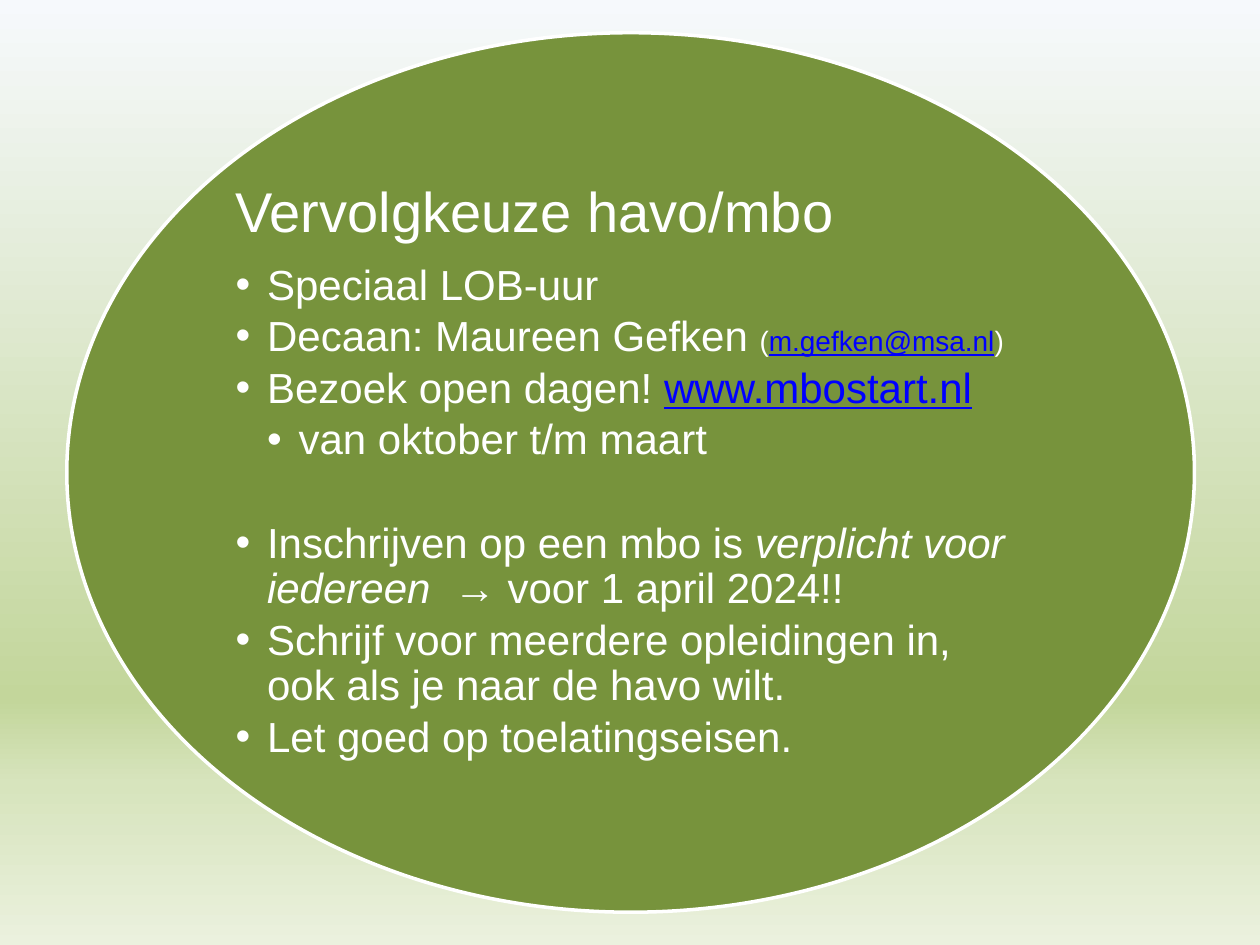
from lxml.etree import SubElement
from pptx import Presentation
from pptx.dml.color import RGBColor
from pptx.enum.shapes import MSO_SHAPE
from pptx.enum.text import MSO_ANCHOR
from pptx.oxml.ns import qn
from pptx.util import Inches, Pt

WHITE = RGBColor(0xFF, 0xFF, 0xFF)
GREEN = RGBColor(0x77, 0x93, 0x3C)
BLUE = RGBColor(0x00, 0x00, 0xFF)
GRADIENT = [
    (0, RGBColor(0xF6, 0xF9, 0xFC)),
    (74, RGBColor(0xC3, 0xD6, 0x9B)),
    (83, RGBColor(0xD7, 0xE4, 0xBD)),
    (100, RGBColor(0xEB, 0xF1, 0xDE)),
]

PLAIN = {}
SMALL = {"size": 16}
ITALIC = {"italic": True}
LINK = {"color": BLUE, "underline": True}

TITLE_GAP, LINE_GAP, SECTION_GAP = 11.2, 3.6, 33.2
PARAGRAPHS = [
    (0, TITLE_GAP, [("Vervolgkeuze havo/mbo", {"size": 32})]),
    (1, LINE_GAP, [("Speciaal LOB-uur", PLAIN)]),
    (1, LINE_GAP, [("Decaan: Maureen Gefken ", PLAIN), ("(", SMALL),
                   ("m.gefken@msa.nl", SMALL | LINK), (")", SMALL)]),
    (1, LINE_GAP, [("Bezoek open dagen! ", PLAIN), ("www.mbostart.nl", LINK)]),
    (2, SECTION_GAP, [("van oktober t/m maart", PLAIN)]),
    (1, LINE_GAP, [("Inschrijven op een mbo is ", PLAIN),
                   ("verplicht voor iedereen  ", ITALIC),
                   ("→ voor 1 april 2024!!", PLAIN)]),
    (1, LINE_GAP, [("Schrijf voor meerdere opleidingen in, ook als je naar de havo wilt.", PLAIN)]),
    (1, LINE_GAP, [("Let goed op toelatingseisen.", PLAIN)]),
]


def set_background(slide):
    fill = slide.background.fill
    fill.gradient()
    fill.gradient_angle = 270
    stops = slide.background._cSld.find(".//" + qn("a:gsLst"))
    for stop in list(stops):
        stops.remove(stop)
    for percent, color in GRADIENT:
        stop = SubElement(stops, qn("a:gs"), pos=str(percent * 1000))
        SubElement(stop, qn("a:srgbClr"), val=str(color))


def add_bullet(p, level):
    p.level = level
    pPr = p._p.get_or_add_pPr()
    pPr.set("marL", str(Inches(0.25 * level)))
    pPr.set("indent", str(Inches(-0.25)))
    SubElement(pPr, qn("a:buFont"), typeface="Arial")
    SubElement(pPr, qn("a:buChar"), char="•")


def add_run(p, text, size=24, color=WHITE, italic=False, underline=False):
    r = p.add_run()
    r.text = text
    r.font.name = "Arial"
    r.font.size = Pt(size)
    r.font.color.rgb = color
    r.font.italic = italic
    r.font.underline = underline


prs = Presentation()
prs.slide_width, prs.slide_height = Inches(10), Inches(7.5)
slide = prs.slides.add_slide(prs.slide_layouts[6])
set_background(slide)

oval = slide.shapes.add_shape(MSO_SHAPE.OVAL, Inches(0.53), Inches(0.26), Inches(8.95), Inches(6.98))
oval.shadow.inherit = False
oval.fill.solid()
oval.fill.fore_color.rgb = GREEN
oval.line.color.rgb = WHITE
oval.line.width = Pt(2)

box = slide.shapes.add_textbox(Inches(1.84), Inches(1.28), Inches(6.33), Inches(4.94))
tf = box.text_frame
tf.word_wrap = True
tf.vertical_anchor = MSO_ANCHOR.MIDDLE
tf.margin_left = tf.margin_right = tf.margin_top = tf.margin_bottom = Inches(0.03)

for i, (level, gap, runs) in enumerate(PARAGRAPHS):
    p = tf.add_paragraph() if i else tf.paragraphs[0]
    if level:
        add_bullet(p, level)
    p.line_spacing = 0.9
    p.space_after = Pt(gap)
    for text, style in runs:
        add_run(p, text, **style)

prs.save("out.pptx")
